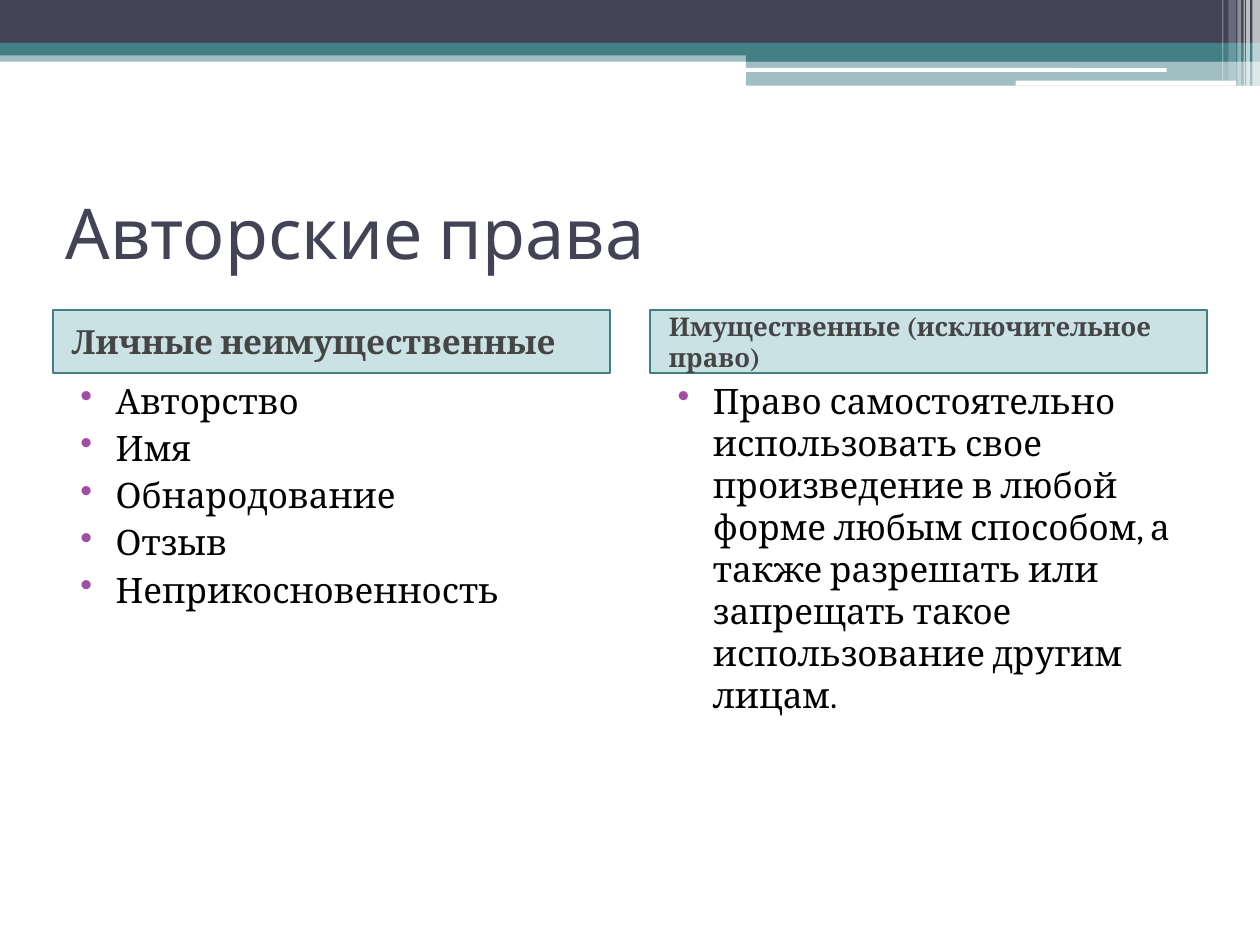
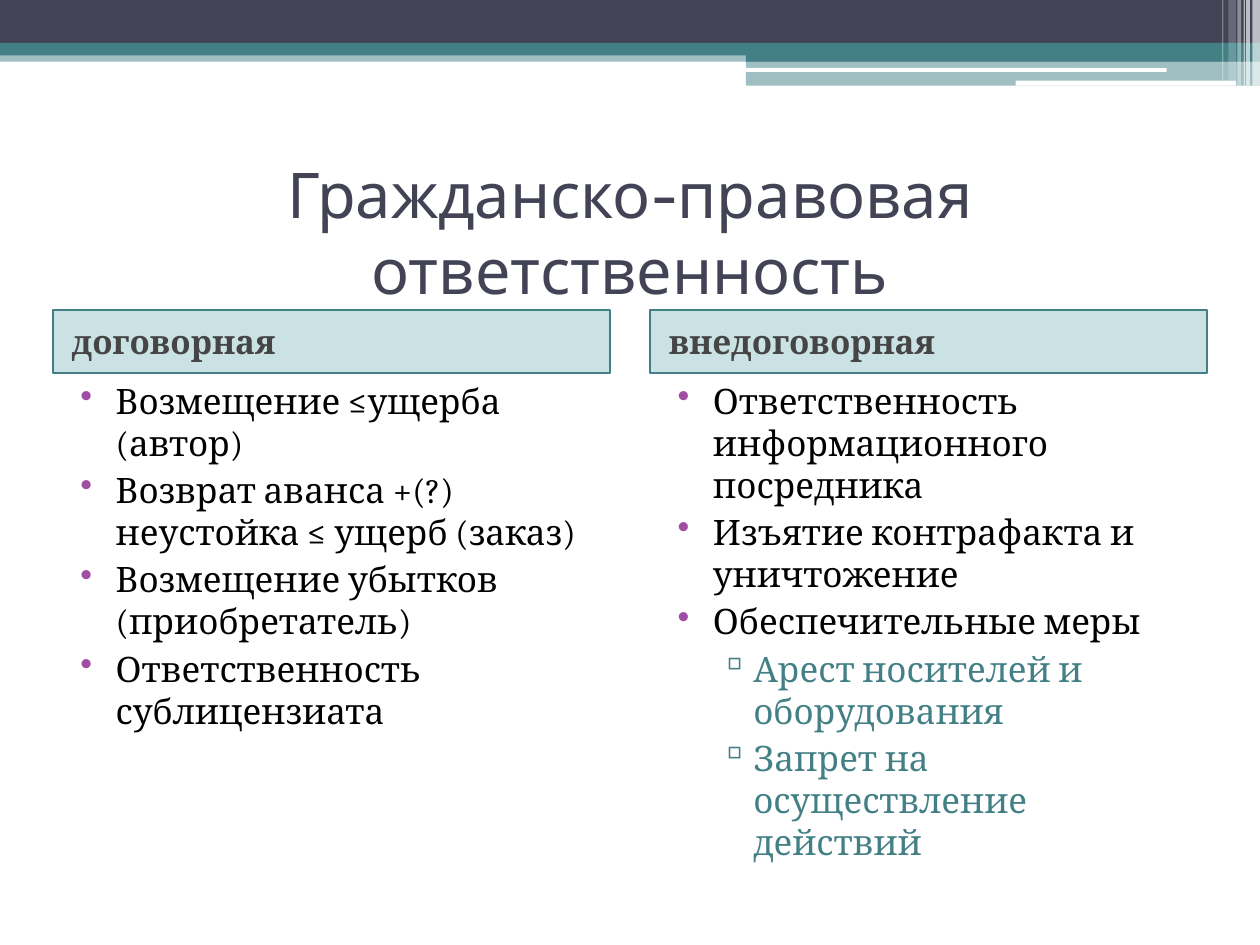
from lxml import etree
from pptx import Presentation
from pptx.dml.color import RGBColor
from pptx.enum.shapes import MSO_SHAPE
from pptx.enum.text import MSO_ANCHOR, PP_ALIGN
from pptx.oxml.ns import qn
from pptx.util import Inches, Pt

RECT, ROUNDED = MSO_SHAPE.RECTANGLE, MSO_SHAPE.ROUNDED_RECTANGLE
TOP, MIDDLE = MSO_ANCHOR.TOP, MSO_ANCHOR.MIDDLE
LEFT, CENTER = PP_ALIGN.LEFT, PP_ALIGN.CENTER

# Content: each column is (heading, heading size, [(level, text), ...])
SLIDES = [
    {
        "title": "Авторские права", "size": 40, "align": LEFT,
        "columns": [
            ("Личные неимущественные", 19, [
                (0, "Авторство"),
                (0, "Имя"),
                (0, "Обнародование"),
                (0, "Отзыв"),
                (0, "Неприкосновенность"),
            ]),
            ("Имущественные (исключительное право)", 14.7, [
                (0, "Право самостоятельно использовать свое произведение в любой "
                    "форме любым способом, а также разрешать или запрещать такое "
                    "использование другим лицам."),
            ]),
        ],
    },
    {
        "title": "Гражданско-правовая ответственность", "size": 36, "align": CENTER,
        "columns": [
            ("договорная", 19, [
                (0, "Возмещение ≤ущерба (автор)"),
                (0, "Возврат аванса +(?) неустойка ≤ ущерб (заказ)"),
                (0, "Возмещение убытков (приобретатель)"),
                (0, "Ответственность сублицензиата"),
            ]),
            ("внедоговорная", 19, [
                (0, "Ответственность информационного посредника"),
                (0, "Изъятие контрафакта и уничтожение"),
                (0, "Обеспечительные меры"),
                (1, "Арест носителей и оборудования"),
                (1, "Запрет на осуществление действий"),
            ]),
        ],
    },
]

# Shared style
COLORS = {
    "navy": "424456", "teal": "438086", "heading fill": "328E97",
    "heading text": "454545", "text": "000000", "bullet": "A04DA3",
    "white": "FFFFFF",
}
TITLE_FONT, BODY_FONT = "Cabin", "Cambria"
BODY_SIZE = 20
SPACE_BEFORE = 3
# Level: (bullet, bullet colour, text colour, indent, hanging)
LEVELS = [
    ("•", "bullet", "text", 0.4, 0.28),
    ("▫", "teal", "teal", 0.72, 0.27),
]

# Grid, in inches
WIDTH, HEIGHT = 10, 7.5
MARGIN = 0.42
COLUMN_W, GUTTER = 4.42, 0.32
TITLE_TOP, TITLE_H = 1.25, 1.17
HEADING_TOP, HEADING_H = 2.46, 0.5
LIST_TOP, LIST_H = HEADING_TOP + HEADING_H, 4.25

# Top band: (shape, left, top, width, height, colour, opacity in %)
STEP = 5.92
BANDS = [
    (RECT, 0, 0.4, WIDTH, 0.09, "teal", 50),
    (RECT, 0, 0, WIDTH, 0.34, "navy", 100),
    (RECT, 0, 0.34, WIDTH, 0.1, "teal", 100),
    (RECT, STEP, 0.39, WIDTH - STEP, 0.1, "teal", 100),
    (RECT, STEP, 0.48, WIDTH - STEP, 0.2, "teal", 50),
    (ROUNDED, 5.91, 0.54, 3.35, 0.03, "white", 100),
    (ROUNDED, 8.06, 0.64, 1.75, 0.04, "white", 100),
]
# Light stripes at the right end: (left, width, height, opacity in %)
STRIPES = [
    (9.94, 0.06, 0.68, 65), (9.89, 0.03, 0.68, 65), (9.87, 0.01, 0.68, 60),
    (9.82, 0.03, 0.68, 40), (9.75, 0.06, 0.64, 20), (9.7, 0.01, 0.64, 30),
]


def rgb(name):
    return RGBColor.from_string(COLORS[name])


def add_block(slide, kind, left, top, width, height, color, opacity):
    block = slide.shapes.add_shape(
        kind, Inches(left), Inches(top), Inches(width), Inches(height))
    block.shadow.inherit = False
    block.fill.solid()
    block.fill.fore_color.rgb = rgb(color)
    block.line.fill.background()
    if opacity < 100:
        fill_color = block.fill._xPr.find(qn("a:solidFill"))[0]
        etree.SubElement(fill_color, qn("a:alpha"), val=str(opacity * 1000))
    return block


def add_text_area(slide, left, top, width, height):
    return slide.shapes.add_textbox(
        Inches(left), Inches(top), Inches(width), Inches(height))


def write(area, texts, font, size, color, anchor, align=LEFT, bold=False):
    """Fill the area with one paragraph per text and return the paragraphs."""
    frame = area.text_frame
    frame.word_wrap = True
    frame.vertical_anchor = anchor
    frame.text = "\n".join(texts)
    for paragraph in frame.paragraphs:
        paragraph.alignment = align
        paragraph.font.name = font
        paragraph.font.size = Pt(size)
        paragraph.font.bold = bold
        paragraph.font.color.rgb = rgb(color)
    return frame.paragraphs


def indent(paragraph, left, hanging=0):
    paragraph.space_before = Pt(SPACE_BEFORE)
    properties = paragraph._p.get_or_add_pPr()
    properties.set("marL", str(Inches(left)))
    properties.set("indent", str(-Inches(hanging)))
    return properties


def add_bullet(paragraph, level):
    bullet, bullet_color, text_color, left, hanging = LEVELS[level]
    paragraph.level = level
    paragraph.font.color.rgb = rgb(text_color)
    properties = indent(paragraph, left, hanging)
    holder = etree.Element(qn("a:buClr"))
    etree.SubElement(holder, qn("a:srgbClr"), val=COLORS[bullet_color])
    mark = etree.Element(qn("a:buChar"), char=bullet)
    # Bullet settings go before the default run properties
    run_defaults = properties.find(qn("a:defRPr"))
    run_defaults.addprevious(holder)
    run_defaults.addprevious(mark)


def add_top_band(slide):
    for band in BANDS:
        add_block(slide, *band)
    for left, width, height, opacity in STRIPES:
        add_block(slide, RECT, left, 0, width, height, "white", opacity)


def add_column(slide, index, heading, heading_size, items):
    left = MARGIN + index * (COLUMN_W + GUTTER)

    # Heading box
    box = add_block(slide, RECT, left, HEADING_TOP, COLUMN_W, HEADING_H,
                    "heading fill", 25)
    box.line.color.rgb = rgb("teal")
    box.line.width = Pt(1)
    for paragraph in write(box, [heading], BODY_FONT, heading_size,
                           "heading text", MIDDLE, bold=True):
        indent(paragraph, 0.05)

    # Bulleted list
    area = add_text_area(slide, left, LIST_TOP, COLUMN_W, LIST_H)
    paragraphs = write(area, [text for _, text in items], BODY_FONT, BODY_SIZE,
                       "text", TOP)
    for paragraph, (level, _) in zip(paragraphs, items):
        add_bullet(paragraph, level)


def main():
    deck = Presentation()
    deck.slide_width, deck.slide_height = Inches(WIDTH), Inches(HEIGHT)
    blank = deck.slide_layouts[6]
    for content in SLIDES:
        slide = deck.slides.add_slide(blank)
        add_top_band(slide)
        title = add_text_area(slide, MARGIN, TITLE_TOP, WIDTH - 2 * MARGIN, TITLE_H)
        write(title, [content["title"]], TITLE_FONT, content["size"], "navy",
              MIDDLE, content["align"])
        for index, column in enumerate(content["columns"]):
            add_column(slide, index, *column)
    deck.save("out.pptx")


if __name__ == "__main__":
    main()
